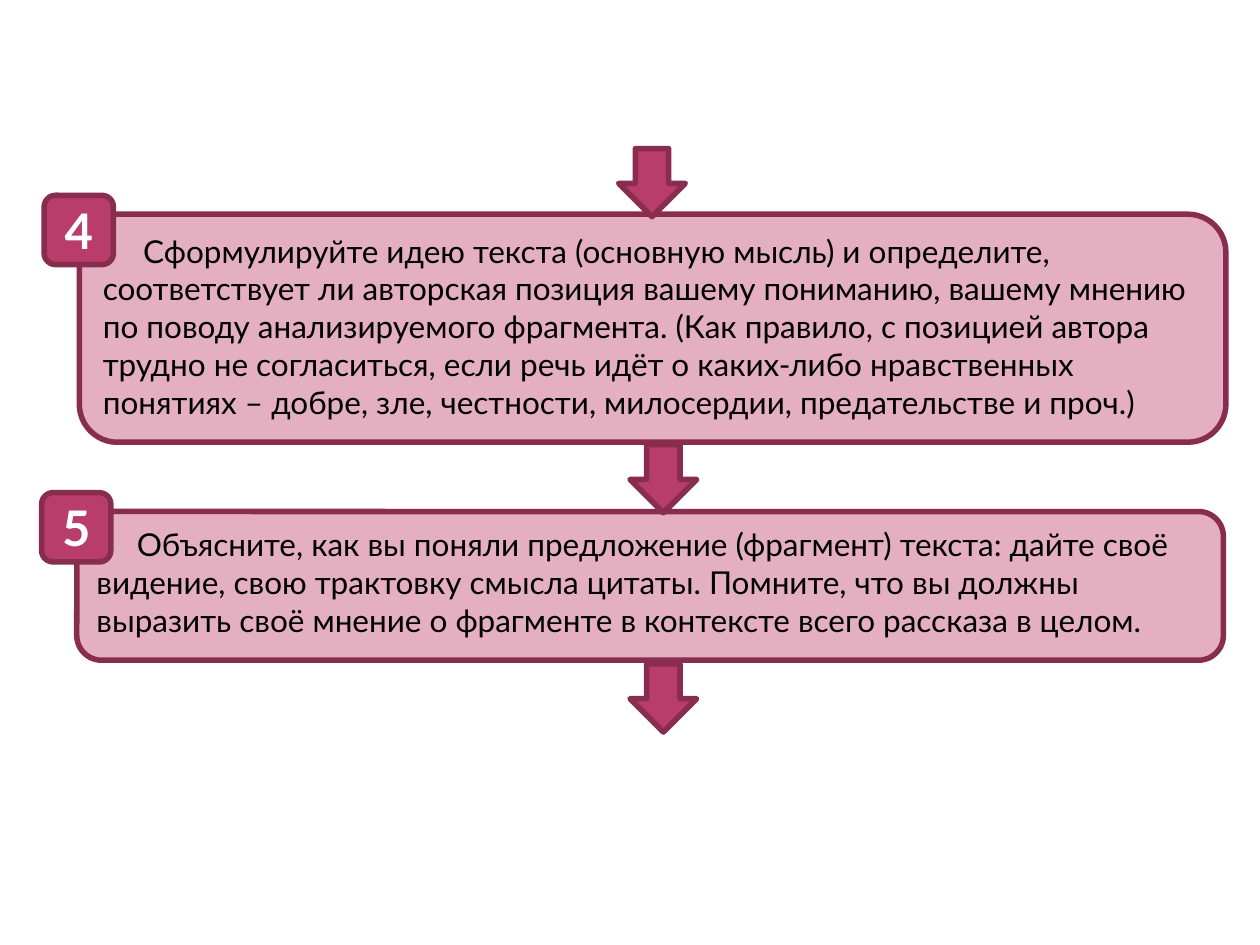
import dataclasses

import pptx
import pptx.dml.color
import pptx.enum.shapes
import pptx.enum.text
import pptx.util

Inches = pptx.util.Inches
Shape = pptx.enum.shapes.MSO_SHAPE
Anchor = pptx.enum.text.MSO_ANCHOR
Align = pptx.enum.text.PP_ALIGN


@dataclasses.dataclass(frozen=True)
class Theme:
    font: str = "Lato"
    panel: str = "E5AFC2"
    accent: str = "B83D68"
    outline: str = "882D4D"
    text: str = "000000"
    number: str = "FFFFFF"
    text_size: int = 18
    number_size: int = 28
    line_width: float = 3.15


THEME = Theme()

# Each step: number, left, top, panel height, wording
STEPS = [
    ("4", 0.63, 1.7, 1.81,
     "Сформулируйте идею текста (основную мысль) и определите, "
     "соответствует ли авторская позиция вашему пониманию, вашему мнению "
     "по поводу анализируемого фрагмента. (Как правило, с позицией автора "
     "трудно не согласиться, если речь идёт о каких-либо нравственных "
     "понятиях – добре, зле, честности, милосердии, предательстве и проч.)"),
    ("5", 0.61, 4.06, 1.18,
     "Объясните, как вы поняли предложение (фрагмент) текста: дайте своё "
     "видение, свою трактовку смысла цитаты. Помните, что вы должны "
     "выразить своё мнение о фрагменте в контексте всего рассказа в целом."),
]
ARROWS = [(4.91, 1.18), (5, 3.53), (5, 5.27)]


def color(value):
    return pptx.dml.color.RGBColor.from_string(value)


def add_outlined(slide, kind, left, top, width, height, fill):
    shape = slide.shapes.add_shape(
        kind, Inches(left), Inches(top), Inches(width), Inches(height))
    shape.shadow.inherit = False
    shape.fill.solid()
    shape.fill.fore_color.rgb = color(fill)
    shape.line.color.rgb = color(THEME.outline)
    shape.line.width = pptx.util.Pt(THEME.line_width)
    return shape


def write(shape, text, size, ink, align, anchor, bold=False):
    frame = shape.text_frame
    frame.word_wrap = True
    frame.vertical_anchor = anchor
    para = frame.paragraphs[0]
    para.alignment = align
    span = para.add_run()
    span.text = text
    span.font.name = THEME.font
    span.font.size = pptx.util.Pt(size)
    span.font.bold = bold
    span.font.color.rgb = color(ink)
    return para


def add_step(slide, number, left, top, height, text):
    # Panel with an indented first line
    panel = add_outlined(slide, Shape.ROUNDED_RECTANGLE,
                         left, top, 9.1, height, THEME.panel)
    para = write(panel, text, THEME.text_size, THEME.text,
                 Align.LEFT, Anchor.TOP)
    para._p.get_or_add_pPr().set("indent", str(Inches(0.32)))

    # Number badge over the top left corner
    badge = add_outlined(slide, Shape.ROUNDED_RECTANGLE,
                         left - 0.28, top - 0.15, 0.55, 0.55, THEME.accent)
    write(badge, number, THEME.number_size, THEME.number,
          Align.CENTER, Anchor.MIDDLE, bold=True)


def add_arrow(slide, left, top):
    add_outlined(slide, Shape.DOWN_ARROW, left, top, 0.53, 0.54, THEME.accent)


def main():
    deck = pptx.Presentation()
    deck.slide_width, deck.slide_height = Inches(10), Inches(7.5)
    slide = deck.slides.add_slide(deck.slide_layouts[6])
    for step in STEPS:
        add_step(slide, *step)
    for left, top in ARROWS:
        add_arrow(slide, left, top)
    deck.save("out.pptx")


if __name__ == "__main__":
    main()
